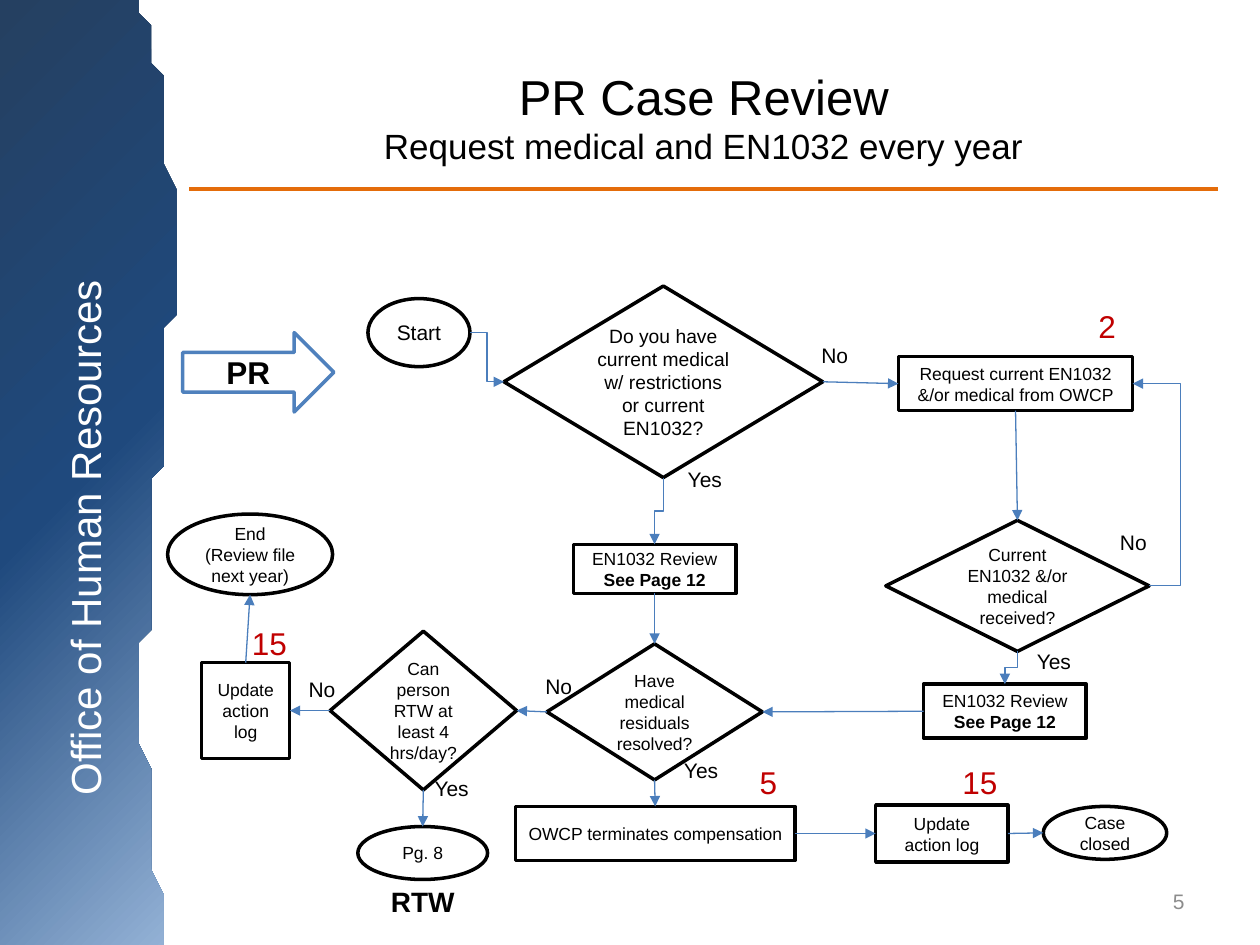
from dataclasses import dataclass

from lxml import etree
from pptx import Presentation
from pptx.dml.color import RGBColor
from pptx.enum.shapes import MSO_CONNECTOR, MSO_SHAPE
from pptx.enum.text import MSO_ANCHOR, MSO_AUTO_SIZE, PP_ALIGN
from pptx.oxml.ns import qn
from pptx.util import Emu, Inches, Pt

LEFT, CENTER, RIGHT = PP_ALIGN.LEFT, PP_ALIGN.CENTER, PP_ALIGN.RIGHT
TOP, MIDDLE = MSO_ANCHOR.TOP, MSO_ANCHOR.MIDDLE
GROW = MSO_AUTO_SIZE.SHAPE_TO_FIT_TEXT
STRAIGHT, ELBOW = MSO_CONNECTOR.STRAIGHT, MSO_CONNECTOR.ELBOW
DECISION, STEP = MSO_SHAPE.FLOWCHART_DECISION, MSO_SHAPE.RECTANGLE
TERMINAL, BLOCK_ARROW = MSO_SHAPE.OVAL, MSO_SHAPE.RIGHT_ARROW

# The slide is a grid of 100 columns by 75 rows
COLUMNS, ROWS = 100, 75
CELL = Inches(0.1)


@dataclass(frozen=True)
class Theme:
    font: str = "Arial"
    ink: str = "000000"
    paper: str = "FFFFFF"
    rule: str = "E46C0A"
    arrow: str = "4B7EBC"
    entry: str = "4F81BD"
    count: str = "C00000"
    muted: str = "8C8C8C"
    wave: tuple = ((0, "254061"), (50, "1F497D"), (100, "95B3D7"))
    title: int = 28
    subtitle: int = 20
    banner: int = 24
    large: int = 18
    exit: int = 16
    label: int = 12
    question: int = 11
    body: int = 10


THEME = Theme()


@dataclass(frozen=True)
class Box:
    left: float
    top: float
    width: float
    height: float

    def inner(self, left, top, width, height):
        return Box(self.left + left, self.top + top, width, height)

    def emu(self):
        return [Emu(round(v * CELL)) for v in (self.left, self.top, self.width, self.height)]

    def side(self, name):
        across, down = {"left": (0, 0.5), "right": (1, 0.5),
                        "top": (0.5, 0), "bottom": (0.5, 1)}[name]
        return self.left + across * self.width, self.top + down * self.height


def write(shape, *lines, size=THEME.body, color=THEME.ink, bold=False, align=CENTER,
          anchor=MIDDLE, wrap=True, grow=False, one_paragraph=False):
    """Write lines; a line is a text or a (text, {size, bold}) pair."""
    frame = shape.text_frame
    frame.word_wrap, frame.vertical_anchor = wrap, anchor
    if grow:
        frame.auto_size = GROW
    paragraph = frame.paragraphs[0]
    for number, line in enumerate(lines):
        text, own = (line, {}) if isinstance(line, str) else line
        if number and one_paragraph:
            paragraph.add_line_break()
        elif number:
            paragraph = frame.add_paragraph()
        paragraph.alignment = align
        run = paragraph.add_run()
        run.text = text
        run.font.name = THEME.font
        run.font.size = Pt(own.get("size", size))
        run.font.bold = own.get("bold", bold)
        run.font.color.rgb = RGBColor.from_string(color)


def text_box(slide, box, *lines, **style):
    shape = slide.shapes.add_textbox(*box.emu())
    write(shape, *lines, **style)
    return shape


def node(slide, kind, box, *lines, outline=THEME.ink, **style):
    shape = slide.shapes.add_shape(kind, *box.emu())
    shape.shadow.inherit = False
    shape.fill.solid()
    shape.fill.fore_color.rgb = RGBColor.from_string(THEME.paper)
    shape.line.color.rgb = RGBColor.from_string(outline)
    shape.line.width = Pt(2)
    write(shape, *lines, **style)
    return box


def connect(slide, start, end, kind=STRAIGHT, color=THEME.arrow, width=0.75, head=True):
    ends = [Emu(round(v * CELL)) for v in (*start, *end)]
    line = slide.shapes.add_connector(kind, *ends)
    line.line.color.rgb = RGBColor.from_string(color)
    line.line.width = Pt(width)
    properties = line._element.spPr
    if head:
        etree.SubElement(properties.find(qn("a:ln")), qn("a:tailEnd"), type="triangle")
    etree.SubElement(properties, qn("a:effectLst"))
    return properties


def elbow_down(slide, start, end):
    """Down, left and down: a level elbow turned a quarter."""
    (x1, y1), (x2, y2) = start, end
    x, y = (x1 + x2) / 2, (y1 + y2) / 2
    across, down = (x1 - x2) / 2, (y2 - y1) / 2
    properties = connect(slide, (x - down, y - across), (x + down, y + across), ELBOW)
    properties.find(qn("a:xfrm")).set("rot", "5400000")


def elbow_around(slide, start, end, turn):
    """Level elbow whose upright part stands at column turn."""
    properties = connect(slide, start, end, ELBOW)
    share = round((turn - start[0]) / (end[0] - start[0]) * 100000)
    adjustments = properties.find(qn("a:prstGeom")).get_or_add_avLst()
    etree.SubElement(adjustments, qn("a:gd"), name="adj1", fmla=f"val {share}")


def sidebar(slide, box):
    # Wave with one curved edge
    edge = ((11.1, 0), (18.4, 25.1), (7.2, 44.6), (13.3, 75))
    steps = 60
    points = []
    for step in range(steps + 1):
        t = step / steps
        weights = ((1 - t) ** 3, 3 * t * (1 - t) ** 2, 3 * t * t * (1 - t), t ** 3)
        x, y = (sum(w * p[axis] for w, p in zip(weights, edge)) for axis in (0, 1))
        points.append((box.left + x, box.top + y))
    points.append((box.left, box.top + box.height))
    outline = slide.shapes.build_freeform(box.left, box.top, scale=CELL)
    outline.add_line_segments(points, close=True)
    wave = outline.convert_to_shape()
    wave.shadow.inherit = False
    wave.line.fill.background()
    wave.fill.gradient()
    wave.fill.gradient_angle = 315
    stops = wave._element.spPr.find(qn("a:gradFill")).find(qn("a:gsLst"))
    for stop in list(stops):
        stops.remove(stop)
    for share, color in THEME.wave:
        stop = etree.SubElement(stops, qn("a:gs"), pos=str(share * 1000))
        etree.SubElement(stop, qn("a:srgbClr"), val=color)
    # Department name, reading upwards
    name = text_box(slide, box.inner(-20.65, 39.9, 54.7, 5.6), "Office of Human Resources",
                    size=THEME.banner, color=THEME.paper)
    name.rotation = 270


def header(slide, box):
    connect(slide, (box.left, box.top + 12), (box.left + box.width, box.top + 12),
            color=THEME.rule, width=2.25, head=False)
    text_box(slide, box, "PR Case Review",
             ("Request medical and EN1032 every year", {"size": THEME.subtitle}),
             size=THEME.title, one_paragraph=True)


def flowchart(slide, box):
    def place(kind, at, *lines, **style):
        return node(slide, kind, box.inner(*at), *lines, **style)

    # Steps, decisions and terminals
    review = ("EN1032 Review", ("See Page 12", {"bold": True}))
    place(BLOCK_ARROW, (1.5, 4.4, 12, 6.3), "PR", outline=THEME.entry,
          size=THEME.large, bold=True)
    start = place(TERMINAL, (16.2, 1.7, 8.1, 5.4), "Start", size=THEME.label)
    have_medical = place(DECISION, (27, 0.7, 25.3, 15.2),
                         "Do you have current medical w/ restrictions or current EN1032?",
                         size=THEME.question)
    request = place(STEP, (58.3, 6.3, 18.6, 4.3), "Request current EN1032 &/or medical from OWCP")
    received = place(DECISION, (57.3, 19.3, 20.9, 10.4),
                     "Current", "EN1032 &/or medical received?")
    review_new = place(STEP, (60.3, 32.3, 12.9, 4.3), *review)
    review_held = place(STEP, (32.5, 21.2, 12.9, 3.9), *review)
    resolved = place(DECISION, (30.4, 29.1, 17.1, 10.8), "Have medical residuals resolved?")
    terminate = place(STEP, (27.9, 42, 22.2, 4.3), "OWCP terminates compensation")
    log_closed = place(STEP, (56.5, 41.9, 10.5, 4.5), "Update action log")
    closed = place(TERMINAL, (69.8, 42, 9.8, 4.2), "Case closed")
    can_return = place(DECISION, (13.2, 28.1, 14.8, 12.6), "Can person RTW at least 4 hrs/day?")
    page_8 = place(TERMINAL, (15.4, 43.6, 10.3, 4.2), "Pg. 8")
    log_review = place(STEP, (3, 30.6, 7, 7.6), "Update action log")
    end = place(TERMINAL, (0.3, 18.8, 13.1, 6.4), "End (Review file next year)")

    # Straight arrows
    for origin, leaving, target, entering in (
            (have_medical, "right", request, "left"), (request, "bottom", received, "top"),
            (review_held, "bottom", resolved, "top"), (review_new, "left", resolved, "right"),
            (resolved, "left", can_return, "right"), (resolved, "bottom", terminate, "top"),
            (terminate, "right", log_closed, "left"), (log_closed, "right", closed, "left"),
            (can_return, "left", log_review, "right"), (can_return, "bottom", page_8, "top"),
            (log_review, "top", end, "bottom")):
        connect(slide, origin.side(leaving), target.side(entering))

    # Bent arrows
    connect(slide, start.side("right"), have_medical.side("left"), ELBOW)
    elbow_down(slide, have_medical.side("bottom"), review_held.side("top"))
    elbow_down(slide, received.side("bottom"), review_new.side("top"))
    elbow_around(slide, received.side("right"), request.side("right"), box.left + 80.7)

    # Answers beside the decisions
    answers = {"No": (4.2, ((51.2, 4.7), (74.9, 19.5), (29.3, 31), (10.5, 31.2))),
               "Yes": (4.8, ((68.3, 29), (40.6, 14.5), (40.3, 37.6), (20.5, 39.1)))}
    for answer, (width, places) in answers.items():
        for left, top in places:
            text_box(slide, box.inner(left, top, width, 3), answer, size=THEME.label,
                     align=LEFT, anchor=TOP, wrap=False, grow=True)

    # Red counts above the steps
    for count, left, top, width in (("2", 73.2, 1.9, 3.3), ("5", 46.3, 38.1, 3.4),
                                    ("15", 6, 27, 4.8), ("15", 62.4, 38.1, 4.8)):
        text_box(slide, box.inner(left, top, width, 4), count, size=THEME.large,
                 color=THEME.count, align=LEFT, anchor=TOP, wrap=False, grow=True)

    # Name of the follow-on process
    text_box(slide, box.inner(16.7, 47.7, 7.7, 3.7), "RTW", size=THEME.exit, bold=True,
             anchor=TOP, grow=True)


def main():
    deck = Presentation()
    deck.slide_width, deck.slide_height = COLUMNS * CELL, ROWS * CELL
    slide = deck.slides.add_slide(deck.slide_layouts[6])
    sidebar(slide, Box(0, 0, 13.7, ROWS))
    header(slide, Box(15, 3, 81.7, 12.5))
    flowchart(slide, Box(13, 22, 82, 52))
    # Page number
    text_box(slide, Box(71.7, 69.5, 23.3, 4), "5", size=THEME.label, color=THEME.muted,
             align=RIGHT)
    deck.save("out.pptx")


if __name__ == "__main__":
    main()
